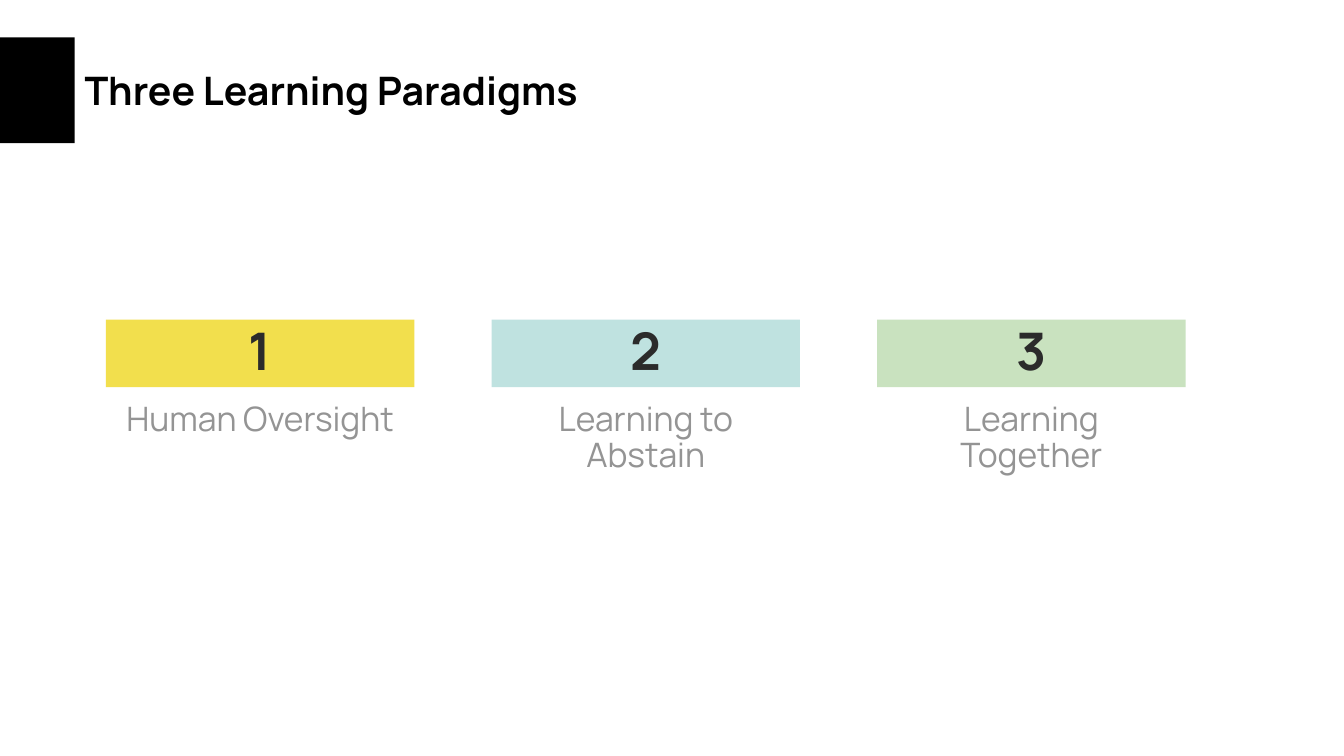
"""Build the slide that introduces three learning paradigms."""
from dataclasses import dataclass

from pptx import Presentation
from pptx.dml.color import RGBColor
from pptx.enum.shapes import MSO_SHAPE
from pptx.enum.text import MSO_ANCHOR, PP_ALIGN
from pptx.util import Inches, Pt

RECT = MSO_SHAPE.RECTANGLE
MIDDLE = MSO_ANCHOR.MIDDLE
TOP = MSO_ANCHOR.TOP
CENTER = PP_ALIGN.CENTER
LEFT = PP_ALIGN.LEFT

BLACK = RGBColor(0x00, 0x00, 0x00)
CHARCOAL = RGBColor(0x2B, 0x2B, 0x2B)
GREY = RGBColor(0x94, 0x94, 0x94)
YELLOW = RGBColor(0xF2, 0xDF, 0x4D)
AQUA = RGBColor(0xBF, 0xE2, 0xE0)
GREEN = RGBColor(0xC9, 0xE2, 0xBF)

FONT = "Manrope"
COLUMN_LEFT, COLUMN_PITCH, COLUMN_WIDTH = 1.05, 3.825, 3.06
BAND_TOP, BAND_HEIGHT = 3.17, 0.67
CAPTION_TOP, CAPTION_HEIGHT = 3.92, 1.59
CAPTION_INDENT = 0.01
MARKER_WIDTH = 0.74


@dataclass(frozen=True)
class Paradigm:
    caption: str
    color: RGBColor


@dataclass(frozen=True)
class TextStyle:
    size: float
    color: RGBColor
    bold: bool = False
    align: PP_ALIGN = CENTER
    anchor: MSO_ANCHOR = TOP
    line_spacing: float = 0.9
    space_before: float = 0
    margin_x: float = 0.13
    margin_y: float = 0.07


PARADIGMS = (
    Paradigm("Human Oversight", YELLOW),
    Paradigm("Learning to Abstain", AQUA),
    Paradigm("Learning Together", GREEN),
)
TITLE = TextStyle(28, BLACK, bold=True, align=LEFT, line_spacing=1,
                  margin_x=0.1, margin_y=0.05)
NUMBER = TextStyle(37, CHARCOAL, bold=True, anchor=MIDDLE)
CAPTION = TextStyle(24, GREY, space_before=13)


def write(sp, text: str, style: TextStyle) -> None:
    tf = sp.text_frame
    tf.word_wrap = True
    tf.vertical_anchor = style.anchor
    tf.margin_left = tf.margin_right = Inches(style.margin_x)
    tf.margin_top = tf.margin_bottom = Inches(style.margin_y)
    p = tf.paragraphs[0]
    p.text = text
    p.alignment = style.align
    p.line_spacing = style.line_spacing
    p.space_before = Pt(style.space_before)
    p.font.name = FONT
    p.font.size = Pt(style.size)
    p.font.bold = style.bold
    p.font.color.rgb = style.color


def add_block(s, x: float, y: float, w: float, h: float, color: RGBColor):
    sp = s.shapes.add_shape(RECT, Inches(x), Inches(y), Inches(w), Inches(h))
    sp.shadow.inherit = False
    sp.fill.solid()
    sp.fill.fore_color.rgb = color
    sp.line.fill.background()
    return sp


def add_text(s, x: float, y: float, w: float, h: float, text: str, style: TextStyle) -> None:
    sp = s.shapes.add_textbox(Inches(x), Inches(y), Inches(w), Inches(h))
    write(sp, text, style)


def add_paradigm(s, column: int, paradigm: Paradigm) -> None:
    x = COLUMN_LEFT + column * COLUMN_PITCH
    band = add_block(s, x, BAND_TOP, COLUMN_WIDTH, BAND_HEIGHT, paradigm.color)
    write(band, str(column + 1), NUMBER)
    add_text(s, x + CAPTION_INDENT, CAPTION_TOP, COLUMN_WIDTH - 2 * CAPTION_INDENT,
             CAPTION_HEIGHT, paradigm.caption, CAPTION)


def main() -> None:
    prs = Presentation()
    prs.slide_width, prs.slide_height = Inches(13.33), Inches(7.5)
    s = prs.slides.add_slide(prs.slide_layouts[6])
    add_text(s, MARKER_WIDTH, 0.61, 10.73, 0.57, "Three Learning Paradigms", TITLE)
    add_block(s, 0, 0.37, MARKER_WIDTH, 1.05, BLACK)
    for column, paradigm in enumerate(PARADIGMS):
        add_paradigm(s, column, paradigm)
    prs.save("out.pptx")


if __name__ == "__main__":
    main()
